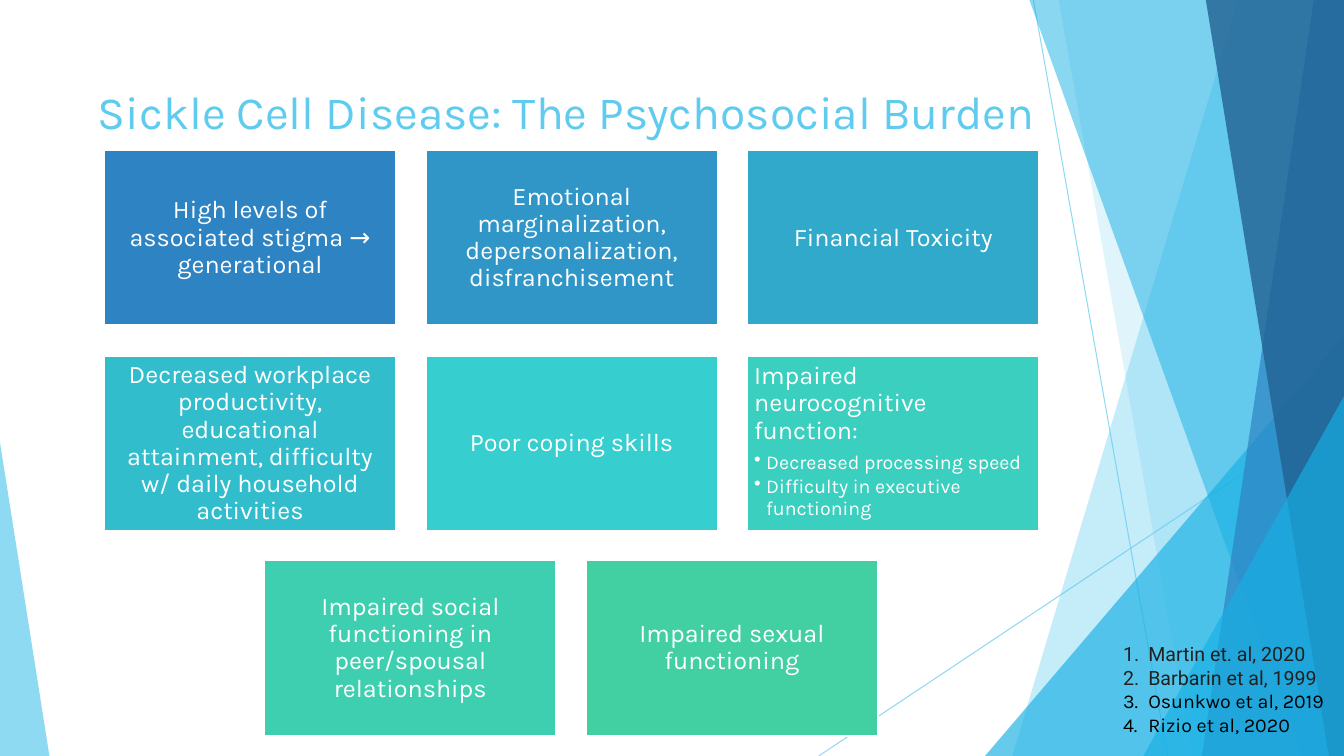
from lxml import etree
from pptx import Presentation
from pptx import util as u
from pptx.dml.color import RGBColor
from pptx.enum import shapes, text
from pptx.oxml import ns

PX = 9144  # EMU per px, 100 px to the inch
WIDTH, HEIGHT = 1333, 750
CARD_WIDTH, CARD_HEIGHT, CARD_PITCH = 290, 174, 319

COLOURS = {
    "white": "FFFFFF", "black": "000000", "ink": "212121",
    "sky": "5FCBEF", "azure": "17B0E4", "blue": "2E83C3", "navy": "226292",
}

# Facets: outline, colour, opacity in percent
BACK_FACETS = [
    ([(1228, 0), (1333, 0), (1333, 750), (1004, 750)], "sky", 36),
    ([(1050, 0), (1333, 0), (1333, 750), (1183, 750)], "sky", 20),
]
FRONT_FACETS = [
    ([(1021, 0), (1333, 0), (1333, 750), (1291, 750)], "azure", 50),
    ([(1303, 0), (1333, 0), (1333, 750), (1192, 750)], "blue", 70),
    ([(1196, 0), (1333, 0), (1333, 750), (1318, 750)], "navy", 80),
]

# Card rows: left, top, (fill, wording) of each card
CARD_ROWS = [
    (103, 149, [
        ("2E83C3", "High levels of associated stigma → generational"),
        ("2F96C7", "Emotional marginalization, depersonalization, disfranchisement"),
        ("30A9CA", "Financial Toxicity"),
    ]),
    (103, 353, [
        ("32BDCD", "Decreased workplace productivity, educational attainment, "
                   "difficulty w/ daily household activities"),
        ("36CECE", "Poor coping skills"),
        ("3ACFBF", "Impaired neurocognitive function:"),
    ]),
    (262, 556, [
        ("3ECFB0", "Impaired social functioning in peer/spousal relationships"),
        ("42D0A2", "Impaired sexual functioning"),
    ]),
]
DETAILS = {
    "Impaired neurocognitive function:": [
        "Decreased processing speed", "Difficulty in executive functioning"],
}
REFERENCES = [
    ("Martin et. al, 2020", "Roboto", "ink"),
    ("Barbarin et al, 1999", "Roboto", "ink"),
    ("Osunkwo et al, 2019", "Karla", "black"),
    ("Rizio et al, 2020", "Karla", "black"),
]


def px(*lengths):
    return [u.Emu(length * PX) for length in lengths]


def rgb(name):
    return RGBColor.from_string(COLOURS[name])


def set_opacity(element, percent):
    colour = element.find(".//" + ns.qn("a:srgbClr"))
    etree.SubElement(colour, ns.qn("a:alpha"), val=str(percent * 1000))


def paint(shape, colour, opacity):
    shape.shadow.inherit = False
    shape.line.fill.background()
    shape.fill.solid()
    shape.fill.fore_color.rgb = rgb(colour)
    set_opacity(shape.fill._xPr, opacity)


def add_thin_line(page, start, end):
    line = page.shapes.add_connector(
        shapes.MSO_CONNECTOR.STRAIGHT, *px(*start, *end))
    line.line.color.rgb = rgb("sky")
    line.line.width = u.Pt(0.75)
    properties = line._element.spPr
    set_opacity(properties, 70)
    etree.SubElement(properties, ns.qn("a:effectLst"))


def add_facet(page, points, colour, opacity):
    builder = page.shapes.build_freeform(*points[0], scale=PX)
    builder.add_line_segments(points[1:], close=True)
    paint(builder.convert_to_shape(), colour, opacity)


def add_triangle(page, frame, apex, colour, opacity):
    triangle = page.shapes.add_shape(
        shapes.MSO_SHAPE.ISOSCELES_TRIANGLE, *px(*frame))
    triangle.adjustments[0] = apex
    paint(triangle, colour, opacity)


def add_span(para, wording, size, font="Karla", colour="white"):
    span = para.add_run()
    span.text = wording
    span.font.size = u.Pt(size)
    span.font.name = font
    span.font.color.rgb = rgb(colour)


def add_marker(para, indent, tag, **attributes):
    properties = para._p.get_or_add_pPr()
    properties.set("marL", str(indent * PX))
    properties.set("indent", str(-indent * PX))
    etree.SubElement(properties, ns.qn(tag), **attributes)


def next_para(frame):
    first = frame.paragraphs[0]
    return frame.add_paragraph() if first.runs else first


def add_card(page, left, top, fill, wording):
    card = page.shapes.add_shape(
        shapes.MSO_SHAPE.RECTANGLE, *px(left, top, CARD_WIDTH, CARD_HEIGHT))
    card.shadow.inherit = False
    card.fill.solid()
    card.fill.fore_color.rgb = RGBColor.from_string(fill)
    card.line.color.rgb = rgb("white")
    card.line.width = u.Pt(1.5)

    details = DETAILS.get(wording, [])
    frame = card.text_frame
    frame.word_wrap = True
    frame.margin_left, frame.margin_top, frame.margin_right, frame.margin_bottom = px(7, 7, 7, 7)
    frame.vertical_anchor = text.MSO_ANCHOR.TOP if details else text.MSO_ANCHOR.MIDDLE
    alignment = text.PP_ALIGN.LEFT if details else text.PP_ALIGN.CENTER
    for line, size, after in [(wording, 18, 6)] + [(detail, 14, 2) for detail in details]:
        para = next_para(frame)
        para.alignment = alignment
        para.line_spacing = 0.9
        para.space_after = u.Pt(after)
        add_span(para, line, size)
        if line in details:
            para.level = 1
            add_marker(para, 12, "a:buChar", char="•")


def add_title(page, wording):
    title = page.shapes.title
    title.left, title.top, title.width, title.height = px(87, 6, 1132, 137)
    frame = title.text_frame
    frame.word_wrap = True
    frame.auto_size = text.MSO_AUTO_SIZE.NONE
    frame.vertical_anchor = text.MSO_ANCHOR.BOTTOM
    para = frame.paragraphs[0]
    para.alignment = text.PP_ALIGN.LEFT
    add_span(para, wording, 33, colour="sky")


def add_references(page):
    box = page.shapes.add_textbox(*px(1104, 632, 229, 104))
    frame = box.text_frame
    frame.word_wrap = True
    for wording, font, colour in REFERENCES:
        para = next_para(frame)
        add_span(para, wording, 14, font, colour)
        add_marker(para, 25, "a:buAutoNum", type="arabicPeriod")


def add_backdrop(page):
    add_thin_line(page, (1025, 0), (1158, HEIGHT))
    add_thin_line(page, (WIDTH, 403), (812, HEIGHT))
    for facet in BACK_FACETS:
        add_facet(page, *facet)
    add_triangle(page, (977, 333, 356, 417), 1, "azure", 66)
    for facet in FRONT_FACETS:
        add_facet(page, *facet)
    add_triangle(page, (1134, 393, 199, 357), 1, "azure", 66)
    add_triangle(page, (0, 439, 49, 311), 0, "sky", 70)


def main():
    deck = Presentation()
    deck.slide_width, deck.slide_height = px(WIDTH, HEIGHT)
    page = deck.slides.add_slide(deck.slide_layouts.get_by_name("Title Only"))

    add_backdrop(page)
    add_title(page, "Sickle Cell Disease: The Psychosocial Burden")
    add_references(page)
    for left, top, cards in CARD_ROWS:
        for column, (fill, wording) in enumerate(cards):
            add_card(page, left + column * CARD_PITCH, top, fill, wording)

    deck.save("out.pptx")


if __name__ == "__main__":
    main()
